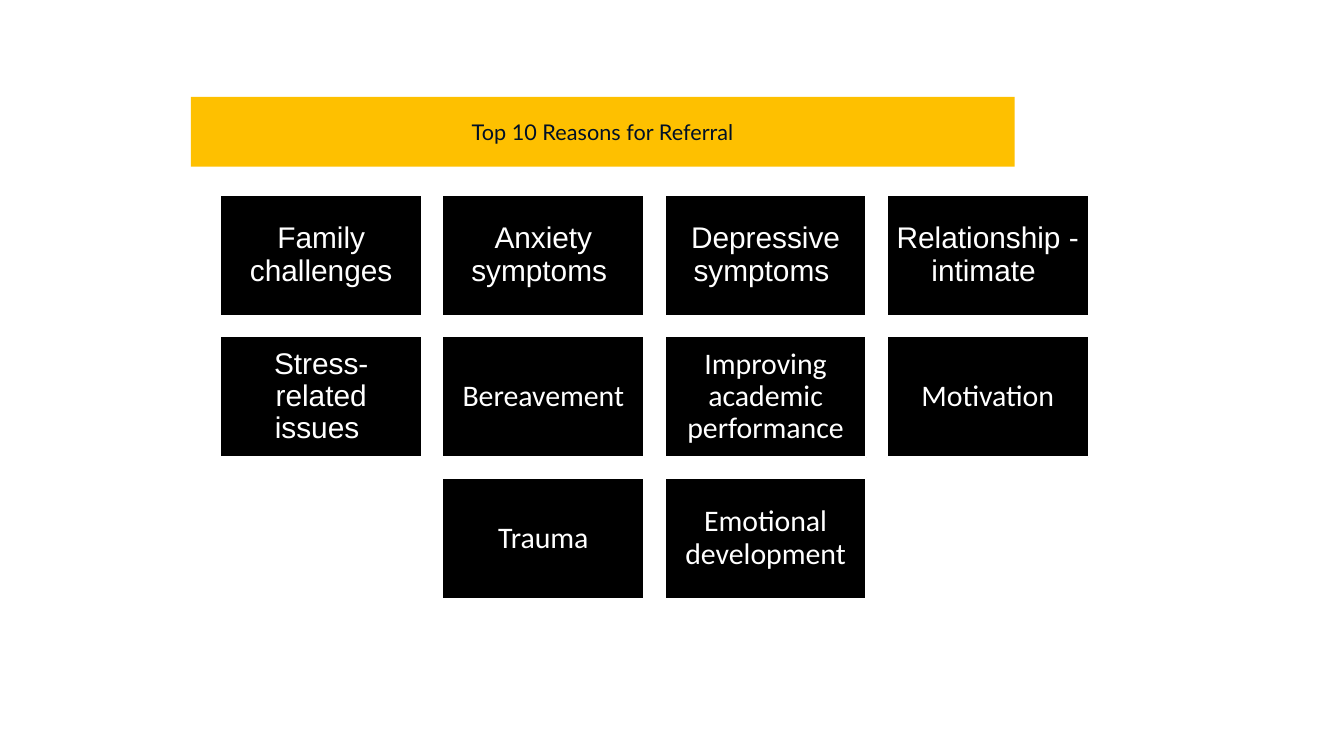
"""Build the slide that shows the top ten reasons for referral."""
from pptx import Presentation
from pptx.dml.color import RGBColor
from pptx.enum.shapes import MSO_SHAPE as SHAPE
from pptx.enum.text import MSO_ANCHOR as ANCHOR, PP_ALIGN as ALIGN
from pptx.util import Inches, Pt

COLORS = {"gold": "FEC000", "navy": "001027", "black": "000000", "white": "FFFFFF"}
REASONS = [
    [("Family challenges", "Arial"), ("Anxiety symptoms ", "Arial"),
     ("Depressive symptoms ", "Arial"), ("Relationship - intimate ", "Arial")],
    [("Stress-related issues ", "Arial"), ("Bereavement", "Calibri"),
     ("Improving academic performance", "Calibri"), ("Motivation", "Calibri")],
    [("Trauma", "Calibri"), ("Emotional development", "Calibri")],
]
SLIDE_W = 10
SLIDE_H = SLIDE_W * 9 / 16
LEFT, TOP, GRID_W, TILE_W, TILE_H = 1.64, 1.45, 6.46, 1.5, 0.9
COLUMNS = 4
GAP = (GRID_W - COLUMNS * TILE_W) / (COLUMNS - 1)


def color(name):
    return RGBColor.from_string(COLORS[name])


def set_all(obj, values):
    for name, value in values.items():
        setattr(obj, name, value)


def add_box(slide, box, text, fill, ink, font, size, inset, spacing=1.0):
    sp = slide.shapes.add_shape(SHAPE.RECTANGLE, *map(Inches, box))
    sp.shadow.inherit = False
    sp.fill.solid()
    sp.fill.fore_color.rgb = color(fill)
    sp.line.fill.background()
    tf = sp.text_frame
    sides = ("left", "top", "right", "bottom")
    set_all(tf, {f"margin_{side}": Inches(inset) for side in sides})
    set_all(tf, {"word_wrap": True, "vertical_anchor": ANCHOR.MIDDLE})
    p = tf.paragraphs[0]
    set_all(p, {"alignment": ALIGN.CENTER, "line_spacing": spacing})
    r = p.add_run()
    r.text = text
    set_all(r.font, {"name": font, "size": Pt(size)})
    r.font.color.rgb = color(ink)
    return sp


def add_title(slide, text):
    add_box(slide, (1.42, 0.72, 6.13, 0.52), text, "gold", "navy", "Lato", 11.6, 0.04)


def add_tile(slide, x, y, text, font):
    sp = add_box(slide, (x, y, TILE_W, TILE_H), text,
                 "black", "white", font, 16, 0.07, 0.9)
    sp.line.color.rgb = color("white")
    sp.line.width = Pt(1)


def add_reasons(slide):
    for row, reasons in enumerate(REASONS):
        indent = (COLUMNS - len(reasons)) / 2
        for col, (text, font) in enumerate(reasons):
            x = LEFT + (indent + col) * (TILE_W + GAP)
            add_tile(slide, x, TOP + row * (TILE_H + GAP), text, font)


def main():
    prs = Presentation()
    set_all(prs, {"slide_width": Inches(SLIDE_W), "slide_height": Inches(SLIDE_H)})
    slide = prs.slides.add_slide(prs.slide_layouts[6])
    add_title(slide, "Top 10 Reasons for Referral")
    add_reasons(slide)
    prs.save("out.pptx")


if __name__ == "__main__":
    main()
